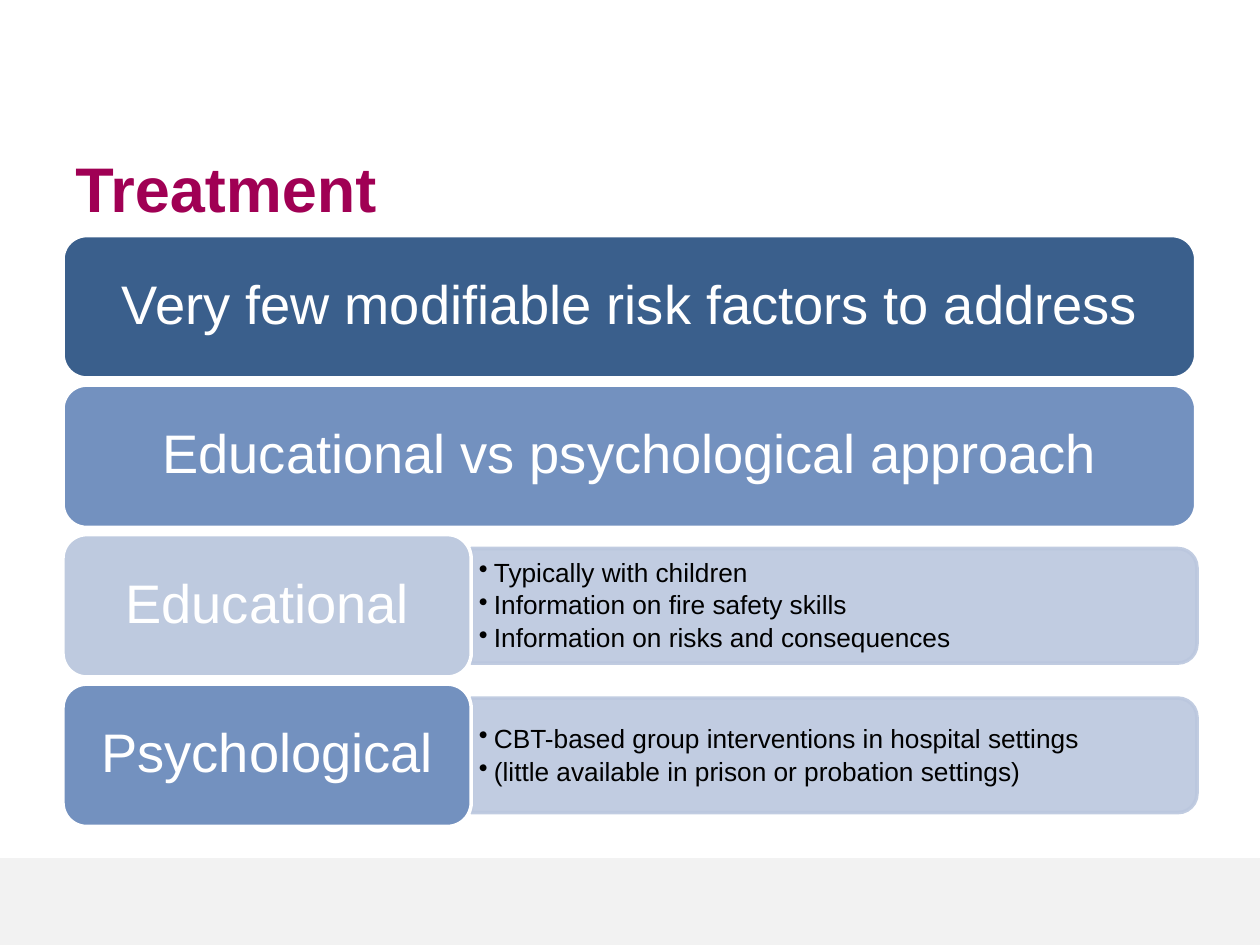
import pptx
import pptx.util
import pptx.dml.color
import pptx.enum.shapes
import pptx.enum.text
import pptx.oxml
from pptx.util import Inches, Pt

FONT = "Arial"
WHITE = "FFFFFF"
BAR_COLOR = "BBC7DE"
SHAPES = pptx.enum.shapes.MSO_SHAPE
ALIGN = pptx.enum.text.PP_ALIGN

LEFT, TOP, FULL_WIDTH, ROW_HEIGHT = 0.5, 1.87, 8.99, 1.13
ROW_PITCH = (5.43 - TOP) / 3
LABEL_WIDTH = 3.24
BAR_WIDTH, BAR_HEIGHT = 5.76, 0.91

BANNERS = [
    ("Very few modifiable risk factors to address", "3A5F8C"),
    ("Educational vs psychological approach", "7391BF"),
]
APPROACHES = [
    ("Educational", "BECADF", [
        "Typically with children",
        "Information on fire safety skills",
        "Information on risks and consequences",
    ]),
    ("Psychological", "7391BF", [
        "CBT-based group interventions in hospital settings",
        "(little available in prison or probation settings)",
    ]),
]


def rgb(color):
    return pptx.dml.color.RGBColor.from_string(color)


def box_lengths(*values):
    return [Inches(value) for value in values]


def format_runs(paragraph, size, color, bold=False):
    for run in paragraph.runs:
        run.font.name = FONT
        run.font.size = Pt(size)
        run.font.bold = bold
        run.font.color.rgb = rgb(color)


def prepare_frame(shape, horizontal, vertical):
    frame = shape.text_frame
    frame.word_wrap = True
    frame.vertical_anchor = pptx.enum.text.MSO_ANCHOR.MIDDLE
    frame.margin_left = frame.margin_right = Inches(horizontal)
    frame.margin_top = frame.margin_bottom = Inches(vertical)
    return frame


def add_filled_shape(slide, kind, box, fill, line=None):
    shape = slide.shapes.add_shape(kind, *box_lengths(*box))
    shape.shadow.inherit = False
    shape.fill.solid()
    shape.fill.fore_color.rgb = rgb(fill)
    if line:
        shape.line.color.rgb = rgb(line)
        shape.line.width = Pt(2)
    else:
        shape.line.fill.background()
    return shape


def set_opacity(shape, percent):
    for color in shape.element.spPr.iter(pptx.oxml.ns.qn("a:srgbClr")):
        alpha = pptx.oxml.parse_xml(
            f'<a:alpha {pptx.oxml.ns.nsdecls("a")} val="{percent * 1000}"/>')
        color.append(alpha)


def add_title(slide, box, text):
    frame = prepare_frame(slide.shapes.add_textbox(*box_lengths(*box)), 0.1, 0.05)
    frame.text = text
    format_runs(frame.paragraphs[0], 36, "A00054", bold=True)


def add_label(slide, box, text, fill):
    shape = add_filled_shape(slide, SHAPES.ROUNDED_RECTANGLE, box, fill, WHITE)
    frame = prepare_frame(shape, 0.18, 0.12)
    frame.text = text
    paragraph = frame.paragraphs[0]
    paragraph.alignment = ALIGN.CENTER
    paragraph.line_spacing = 0.9
    format_runs(paragraph, 31, WHITE)


def add_bullets(slide, box, items):
    frame = prepare_frame(slide.shapes.add_textbox(*box_lengths(*box)), 0.06, 0.03)
    frame.text = "\n".join(items)
    for paragraph in frame.paragraphs:
        properties = paragraph._p.get_or_add_pPr()
        properties.set("marL", str(Inches(0.12)))
        properties.set("indent", str(-Inches(0.12)))
        properties.append(pptx.oxml.parse_xml(
            f'<a:buChar {pptx.oxml.ns.nsdecls("a")} char="•"/>'))
        paragraph.line_spacing = 0.9
        paragraph.space_after = Pt(2.6)
        format_runs(paragraph, 15, "000000")


def add_approach(slide, box, label, fill, items):
    left, top, width, height = box
    bar_left = left + LABEL_WIDTH
    bar_top = top + (height - BAR_HEIGHT) / 2

    # Bar rounded on its right: an upright shape turned a quarter about its centre
    shift = (BAR_WIDTH - BAR_HEIGHT) / 2
    bar = add_filled_shape(
        slide, SHAPES.ROUND_2_SAME_RECTANGLE,
        (bar_left + shift, bar_top - shift, BAR_HEIGHT, BAR_WIDTH),
        BAR_COLOR, BAR_COLOR)
    bar.rotation = 90
    set_opacity(bar, 90)

    add_bullets(slide, (bar_left, bar_top + 0.05, BAR_WIDTH - 0.04, BAR_HEIGHT - 0.09), items)
    add_label(slide, (left, top, LABEL_WIDTH, height), label, fill)


def main():
    presentation = pptx.Presentation()
    presentation.slide_width = Inches(10)
    presentation.slide_height = Inches(7.5)
    slide = presentation.slides.add_slide(presentation.slide_layouts[6])

    # Footer band and title
    add_filled_shape(slide, SHAPES.RECTANGLE, (0, 6.81, 10, 0.69), "F2F2F2")
    add_title(slide, (0.5, 1.12, 8.5, 0.74), "Treatment")

    # Evenly spaced rows: banners first, then approaches
    rows = [(LEFT, TOP + index * ROW_PITCH, FULL_WIDTH, ROW_HEIGHT)
            for index in range(len(BANNERS) + len(APPROACHES))]
    for box, (text, fill) in zip(rows, BANNERS):
        add_label(slide, box, text, fill)
    for box, (label, fill, items) in zip(rows[len(BANNERS):], APPROACHES):
        add_approach(slide, box, label, fill, items)

    presentation.save("out.pptx")


if __name__ == "__main__":
    main()
